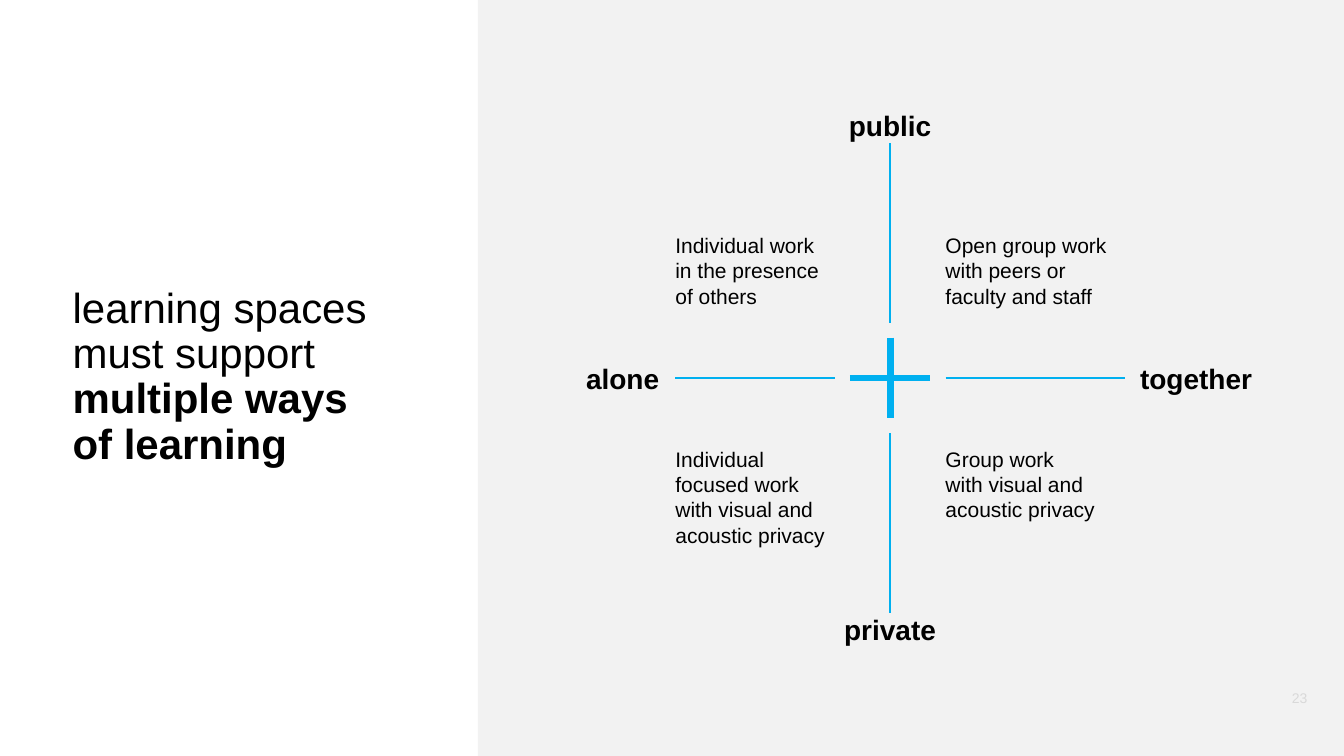
from dataclasses import dataclass
from typing import Optional

from lxml.etree import SubElement
from pptx import Presentation
from pptx.dml.color import RGBColor
from pptx.enum.shapes import MSO_CONNECTOR as Conn, MSO_SHAPE as Shape
from pptx.enum.text import MSO_ANCHOR as Anchor, MSO_AUTO_SIZE as Auto, PP_ALIGN as Align
from pptx.oxml.ns import qn
from pptx.util import Inches, Pt

# Grid of tenth-inch columns and rows
COLS, ROWS = 133.33, 75
CX, CY = 88.3, 37.5          # centre of the two axes
ARM, INNER, OUTER = 4, 5.5, 23.3  # distances from the centre
LEFT_END = 21.3
FONT, BLACK, BLUE = "Arial", "000000", "00B0F0"


@dataclass
class Label:
    text: str
    col: float
    row: float
    cols: float
    rows: float
    align: Align = Align.LEFT
    size: float = 15
    bold: bool = False
    color: str = BLACK


@dataclass
class Axis:
    x1: float
    y1: float
    x2: float
    y2: float
    width: float = 1.5
    begin: Optional[str] = None  # label whose bottom the line starts from
    end: Optional[str] = None    # label whose top the line ends at


def cell(n: float) -> Inches:
    return Inches(n / 10)


def rgb(color: str) -> RGBColor:
    return RGBColor.from_string(color)


def add_text(p, text: str, *, size: float, bold: bool = False, color: str = BLACK) -> None:
    for i, line in enumerate(text.split("\n")):
        if i:
            p.add_line_break()
        r = p.add_run()
        r.text = line
        r.font.name, r.font.size, r.font.bold = FONT, Pt(size), bold
        r.font.color.rgb = rgb(color)


def set_frame(tf, anchor: Anchor = Anchor.TOP) -> None:
    tf.margin_left = tf.margin_top = tf.margin_right = tf.margin_bottom = 0
    tf.word_wrap, tf.auto_size, tf.vertical_anchor = True, Auto.NONE, anchor


def add_label(s, label: Label):
    sp = s.shapes.add_textbox(cell(label.col), cell(label.row), cell(label.cols), cell(label.rows))
    set_frame(sp.text_frame)
    p = sp.text_frame.paragraphs[0]
    p.alignment = label.align
    add_text(p, label.text, size=label.size, bold=label.bold, color=label.color)
    return sp


def add_axis(s, axis: Axis, boxes: dict) -> None:
    line = s.shapes.add_connector(Conn.STRAIGHT, cell(axis.x1), cell(axis.y1),
                                  cell(axis.x2), cell(axis.y2))
    line.line.color.rgb, line.line.width = rgb(BLUE), Pt(axis.width)
    SubElement(line._element.spPr, qn("a:effectLst"))
    if axis.begin:
        line.begin_connect(boxes[axis.begin], 2)
    if axis.end:
        line.end_connect(boxes[axis.end], 0)


POLE = dict(rows=3.4, size=20, bold=True)
WEST, EAST, NORTH, SOUTH = 67, CX + INNER, 23.1, 44.3
LABELS = [
    Label("public", CX - 7.9, 10.8, 15.8, align=Align.CENTER, **POLE),
    Label("private", CX - 7.9, CY + OUTER, 15.8, align=Align.CENTER, **POLE),
    Label("together", 113.1, 35.9, 11.4, **POLE),
    Label("alone", 57.9, 35.9, 7.5, align=Align.RIGHT, **POLE),
    Label("Individual work in the presence of others", WEST, NORTH, 15, 7.6),
    Label("Open group work with peers or faculty and staff", EAST, NORTH, 17.4, 7.6),
    Label("Individual focused work with visual and acoustic privacy", WEST, SOUTH, 15.8, 13.5),
    Label("Group work \nwith visual and acoustic privacy", EAST, SOUTH, 17.4, 7.6),
    Label("23", 124.7, 68.4, 5, 1.8, Align.RIGHT, 10, color="D9D9D9"),
]
AXES = [
    Axis(CX, CY - ARM, CX, CY + ARM, 5),
    Axis(CX - ARM, CY, CX + ARM, CY, 5),
    Axis(CX + INNER, CY, CX + OUTER, CY),
    Axis(CX - LEFT_END, CY, CX - INNER, CY),
    Axis(CX, CY - OUTER, CX, CY - INNER, begin="public"),
    Axis(CX, CY + INNER, CX, CY + OUTER, end="private"),
]


def main() -> None:
    prs = Presentation()
    prs.slide_width, prs.slide_height = cell(COLS), cell(ROWS)
    s = prs.slides.add_slide(prs.slide_layouts[5])

    # Grey panel
    panel_col = 47.4
    panel = s.shapes.add_shape(Shape.RECTANGLE, cell(panel_col), 0, cell(COLS - panel_col), cell(ROWS))
    panel.shadow.inherit = False
    panel.fill.solid()
    panel.fill.fore_color.rgb = rgb("F2F2F2")
    panel.line.fill.background()

    # Title
    title = s.shapes.title
    title.left, title.top, title.width, title.height = map(cell, (7.2, 24.4, 37.8, 26.1))
    set_frame(title.text_frame, Anchor.MIDDLE)
    p = title.text_frame.paragraphs[0]
    p.alignment, p.line_spacing = Align.LEFT, 0.9
    add_text(p, "learning spaces must support ", size=30)
    add_text(p, "multiple ways \nof learning", size=30, bold=True)

    # Labels, then the axes between them
    boxes = {label.text: add_label(s, label) for label in LABELS}
    for axis in AXES:
        add_axis(s, axis, boxes)

    prs.save("out.pptx")


if __name__ == "__main__":
    main()
